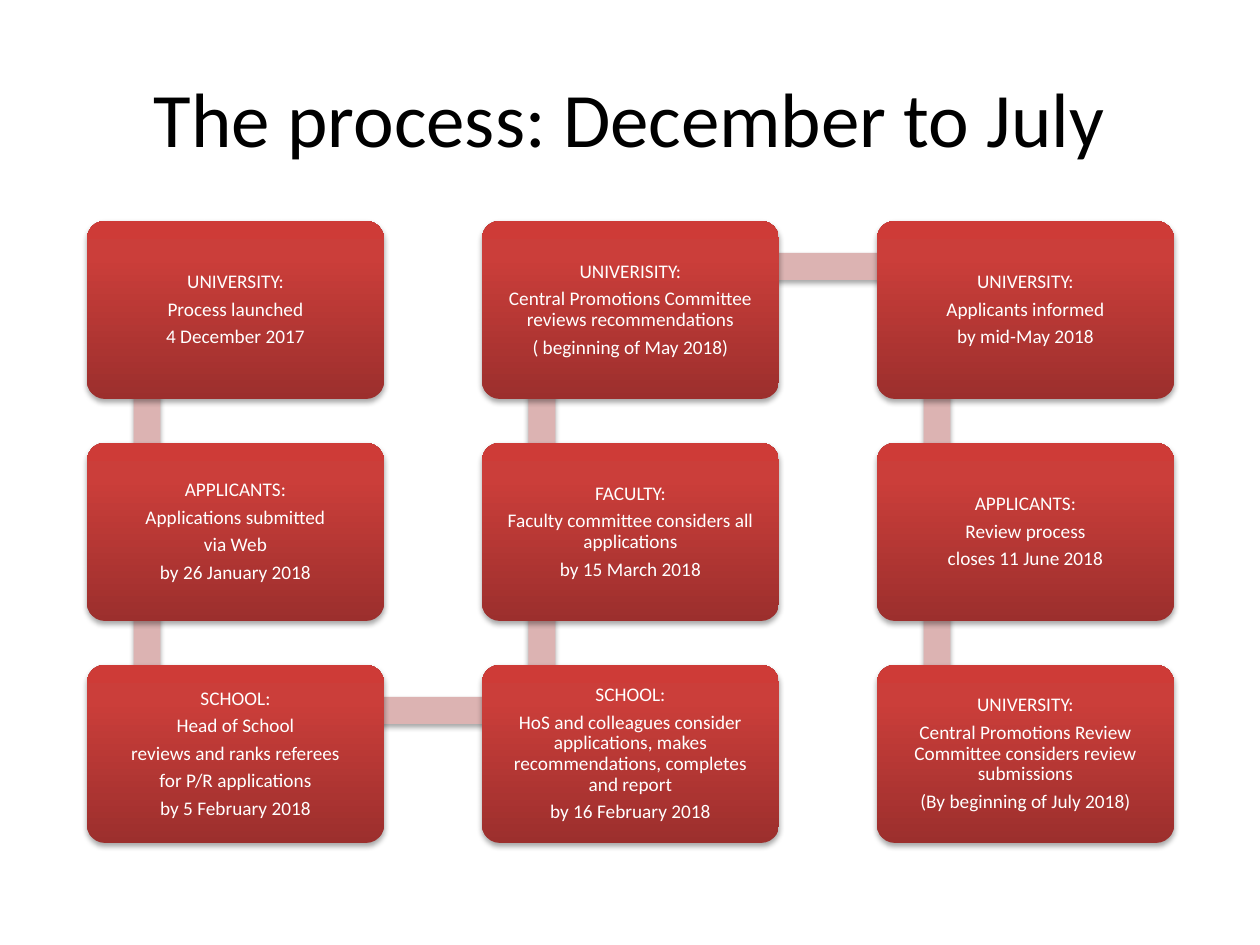
from pptx import Presentation, oxml
from pptx import util as u
from pptx.dml.color import RGBColor
from pptx.enum import shapes, text
from pptx.oxml.ns import nsdecls

PX = 7257  # EMU per pixel, 126 pixels to the inch
BLACK = RGBColor(0x00, 0x00, 0x00)
WHITE = RGBColor(0xFF, 0xFF, 0xFF)
PINK = RGBColor(0xDC, 0xB3, 0xB2)
RED_STOPS = [
    (0, RGBColor(0x9C, 0x2F, 0x2D)),
    (80, RGBColor(0xCB, 0x3E, 0x3A)),
    (100, RGBColor(0xCE, 0x3B, 0x37)),
]

LEFT, TOP = 87, 221
BOX_WIDTH, BOX_HEIGHT = 297, 178
COLUMN_STEP, ROW_STEP = 395, 222
BAR = 27
INSET = 11

# Steps in order of time: down the first column, up the second, down the third
STEPS = [
    (0, 0, ["UNIVERSITY:", "Process launched", "4 December 2017"]),
    (0, 1, ["APPLICANTS:", "Applications submitted", "via Web", "by 26 January 2018"]),
    (0, 2, ["SCHOOL:", "Head of School", "reviews and ranks referees",
            "for P/R applications", "by 5 February 2018"]),
    (1, 2, ["SCHOOL:",
            "HoS and colleagues consider applications, makes recommendations, "
            "completes and report",
            "by 16 February 2018"]),
    (1, 1, ["FACULTY:", "Faculty committee considers all applications",
            "by 15 March 2018"]),
    (1, 0, ["UNIVERISITY:", "Central Promotions Committee reviews recommendations",
            "( beginning of May 2018)"]),
    (2, 0, ["UNIVERSITY:", "Applicants informed", "by mid-May 2018"]),
    (2, 1, ["APPLICANTS:", "Review process", "closes 11 June 2018"]),
    (2, 2, ["UNIVERSITY:",
            "Central Promotions Review Committee considers review submissions",
            "(By beginning of July 2018)"]),
]


def add_shadowed(kind, left, top, width, height):
    """Add a shape without an outline and with a soft shadow below it."""
    shape = slide.shapes.add_shape(kind, left * PX, top * PX, width * PX, height * PX)
    shape.line.fill.background()
    shape._element.spPr.append(oxml.parse_xml(
        f'<a:effectLst {nsdecls("a")}>'
        '<a:outerShdw blurRad="40000" dist="23000" dir="5400000" rotWithShape="0">'
        '<a:srgbClr val="000000"><a:alpha val="35000"/></a:srgbClr>'
        '</a:outerShdw></a:effectLst>'))
    return shape


def write(frame, lines, size, color):
    """Fill a text frame with centred paragraphs."""
    frame.word_wrap = True
    frame.vertical_anchor = text.MSO_ANCHOR.MIDDLE
    for index, line in enumerate(lines):
        paragraph = frame.add_paragraph() if index else frame.paragraphs[0]
        paragraph.text = line
        paragraph.alignment = text.PP_ALIGN.CENTER
        paragraph.font.name = "Calibri"
        paragraph.font.size = u.Pt(size)
        paragraph.font.color.rgb = color


presentation = Presentation()
presentation.slide_width = u.Inches(10)
presentation.slide_height = u.Inches(7.5)
slide = presentation.slides.add_slide(presentation.slide_layouts[6])

title = slide.shapes.add_textbox(63 * PX, 38 * PX, 1134 * PX, 158 * PX)
write(title.text_frame, ["The process: December to July"], 44, BLACK)

stops = "".join(f'<a:gs pos="{position * 1000}"><a:srgbClr val="{color}"/></a:gs>'
                for position, color in RED_STOPS)
gradient = (f'<a:gradFill {nsdecls("a")} rotWithShape="1"><a:gsLst>{stops}</a:gsLst>'
            '<a:lin ang="16200000" scaled="0"/></a:gradFill>')

for index, (column, row, lines) in enumerate(STEPS):
    left = LEFT + column * COLUMN_STEP
    top = TOP + row * ROW_STEP

    # Bar to the next step, drawn first so that the boxes cover its ends
    if index + 1 < len(STEPS):
        next_column, next_row, _ = STEPS[index + 1]
        if next_column > column:
            bar = add_shadowed(shapes.MSO_SHAPE.RECTANGLE,
                               left + 60, top + 32, COLUMN_STEP, BAR)
        else:
            center = TOP + min(row, next_row) * ROW_STEP + 155
            bar = add_shadowed(shapes.MSO_SHAPE.RECTANGLE, left + 60 - ROW_STEP // 2,
                               center - BAR // 2, ROW_STEP, BAR)
            bar.rotation = 90 if next_row > row else 270
        bar.fill.solid()
        bar.fill.fore_color.rgb = PINK

    box = add_shadowed(shapes.MSO_SHAPE.ROUNDED_RECTANGLE,
                       left, top, BOX_WIDTH, BOX_HEIGHT)
    box.adjustments[0] = 0.1
    box.line._ln.addprevious(oxml.parse_xml(gradient))
    frame = box.text_frame
    frame.margin_left = frame.margin_right = INSET * PX
    frame.margin_top = frame.margin_bottom = INSET * PX
    write(frame, lines, 11, WHITE)
    for paragraph in frame.paragraphs:
        paragraph.line_spacing = 0.9
        paragraph.space_after = u.Pt(3.85)

presentation.save("out.pptx")
